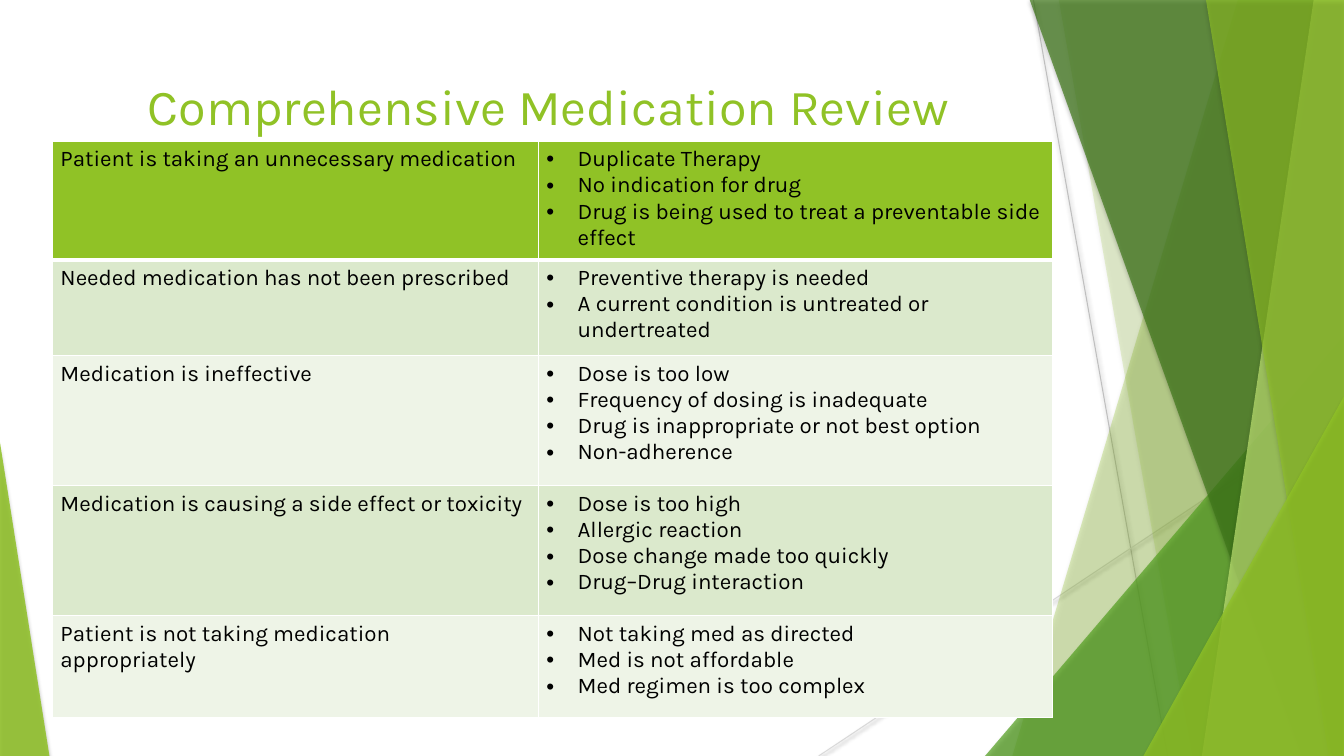
from dataclasses import dataclass

from lxml import etree
from pptx import Presentation
from pptx.dml.color import RGBColor
from pptx.enum.shapes import MSO_CONNECTOR, MSO_SHAPE
from pptx.enum.text import MSO_ANCHOR, MSO_AUTO_SIZE, PP_ALIGN
from pptx.oxml.ns import qn
from pptx.util import Pt

PX = 9144  # EMU; 100 px to the inch
WIDTH, HEIGHT = 1333, 750
FONT = "Karla"
GREEN, LEAF, FOREST, LIME = "90C226", "54A021", "3F7819", "C0E474"
BLACK, WHITE = "000000", "FFFFFF"
BANDS = ("DBE9CC", "EEF4E7")
INDENT = 31
THIN, THICK = 0.96, 3
STRAIGHT = MSO_CONNECTOR.STRAIGHT
TRIANGLE = MSO_SHAPE.ISOSCELES_TRIANGLE
CENTER, MIDDLE = PP_ALIGN.CENTER, MSO_ANCHOR.MIDDLE
NO_AUTOFIT = MSO_AUTO_SIZE.NONE


@dataclass
class Ray:
    start: tuple[int, int]
    end: tuple[int, int]
    color: str


@dataclass
class Facet:
    """A pane from a slanted left edge to the right side of the slide."""
    top_x: int
    bottom_x: int
    color: str
    opacity: int


@dataclass
class Corner:
    """A triangle standing on the bottom edge, its apex at 0 (left) or 1 (right)."""
    left: int
    top: int
    width: int
    apex: int
    color: str
    opacity: int


@dataclass
class Problem:
    name: str
    causes: list[str]
    height: int


RAYS = [
    Ray((1025, 0), (1158, 750), "BFBFBF"),
    Ray((1333, 403), (812, 750), "D9D9D9"),
]
PANES = [
    Facet(1228, 1004, GREEN, 30),
    Facet(1050, 1182, GREEN, 20),
    Corner(977, 333, 356, 1, LEAF, 72),
    Facet(1021, 1291, FOREST, 70),
    Facet(1303, 1192, LIME, 70),
    Facet(1196, 1318, GREEN, 65),
    Corner(1134, 393, 199, 1, GREEN, 80),
    Corner(0, 439, 49, 0, GREEN, 85),
]
COLUMNS = (482, 510)
PROBLEMS = [
    Problem("Patient is taking an unnecessary medication",
            ["Duplicate Therapy", "No indication for drug",
             "Drug is being used to treat a preventable side effect"], 118),
    Problem("Needed medication has not been prescribed",
            ["Preventive therapy is needed",
             "A current condition is untreated or undertreated"], 95),
    Problem("Medication is ineffective",
            ["Dose is too low", "Frequency of dosing is inadequate",
             "Drug is inappropriate or not best option", "Non-adherence"], 129),
    Problem("Medication is causing a side effect or toxicity",
            ["Dose is too high", "Allergic reaction",
             "Dose change made too quickly", "Drug–Drug interaction"], 129),
    Problem("Patient is not taking medication appropriately",
            ["Not taking med as directed", "Med is not affordable",
             "Med regimen is too complex"], 101),
]


def rgb(color: str) -> RGBColor:
    return RGBColor.from_string(color)


def px(*lengths: int) -> list[int]:
    return [length * PX for length in lengths]


def add_node(parent, tag: str, **attributes):
    return etree.SubElement(parent, qn(tag), {key: str(value) for key, value in attributes.items()})


def add_shadow(shape, opacity: int, blur: float, distance: float) -> None:
    effects = add_node(shape.element.spPr, "a:effectLst")
    shadow = add_node(effects, "a:outerShdw", blurRad=Pt(blur), dist=Pt(distance),
                      dir=90 * 60000, rotWithShape=0)
    color = add_node(shadow, "a:srgbClr", val=BLACK)
    add_node(color, "a:alpha", val=opacity * 1000)


def draw_ray(shapes, ray: Ray) -> None:
    line = shapes.add_connector(STRAIGHT, *px(*ray.start, *ray.end))
    line.line.color.rgb = rgb(ray.color)
    line.line.width = Pt(0.75)
    add_shadow(line, 38, 3.1, 1.6)


def draw_pane(shapes, pane: Facet | Corner) -> None:
    if isinstance(pane, Facet):
        builder = shapes.build_freeform(pane.top_x, -1, scale=PX)
        builder.add_line_segments([(WIDTH, -1), (WIDTH, HEIGHT), (pane.bottom_x, HEIGHT)])
        shape = builder.convert_to_shape()
    else:
        shape = shapes.add_shape(
            TRIANGLE, *px(pane.left, pane.top, pane.width, HEIGHT - pane.top))
        shape.adjustments[0] = pane.apex
    shape.fill.solid()
    shape.fill.fore_color.rgb = rgb(pane.color)
    color = shape.element.spPr.find(qn("a:solidFill")).find(qn("a:srgbClr"))
    add_node(color, "a:alpha", val=pane.opacity * 1000)
    shape.line.fill.background()
    add_shadow(shape, 35, 3, 2)


def format_title(title) -> None:
    title.left, title.top, title.width, title.height = px(74, 67, 940, 74)
    frame = title.text_frame
    frame.text = "Comprehensive Medication Review"
    frame.auto_size = NO_AUTOFIT
    frame.vertical_anchor = MIDDLE
    para = frame.paragraphs[0]
    para.alignment = CENTER
    para.font.name, para.font.size = FONT, Pt(36)
    para.font.color.rgb = rgb(GREEN)


def add_bullet(para) -> None:
    properties = para._p.get_or_add_pPr()
    properties.set("marL", str(INDENT * PX))
    properties.set("indent", str(-INDENT * PX))
    # Bullet nodes come before the default run properties
    for position, (tag, key, value) in enumerate(
            [("a:buFont", "typeface", "Arial"), ("a:buChar", "char", "•")]):
        properties.insert(position, add_node(properties, tag, **{key: value}))


def fill_cell(cell, lines: list[str], bulleted: bool, row: int) -> None:
    cell.margin_left, cell.margin_right, cell.margin_top, cell.margin_bottom = px(8, 8, 5, 5)
    cell.text_frame.text = "\n".join(lines)
    for para in cell.text_frame.paragraphs:
        para.font.name, para.font.size = FONT, Pt(16)
        para.font.color.rgb = rgb(BLACK)
        if bulleted:
            add_bullet(para)
    top = THICK if row == 1 else THIN
    bottom = THICK if row == 0 else THIN
    for side, width in zip("LRTB", (THIN, THIN, top, bottom)):
        border = add_node(cell._tc.get_or_add_tcPr(), f"a:ln{side}", w=Pt(width))
        add_node(add_node(border, "a:solidFill"), "a:srgbClr", val=WHITE)
    cell.fill.solid()
    cell.fill.fore_color.rgb = rgb(BANDS[(row - 1) % 2] if row else GREEN)


def draw_table(shapes) -> None:
    heights = [problem.height for problem in PROBLEMS]
    table = shapes.add_table(len(PROBLEMS), len(COLUMNS),
                             *px(52, 140, sum(COLUMNS), sum(heights))).table
    table.first_row = table.horz_banding = False
    for column, width in zip(table.columns, COLUMNS):
        column.width = width * PX
    for row, problem in enumerate(PROBLEMS):
        table.rows[row].height = problem.height * PX
        fill_cell(table.cell(row, 0), [problem.name], False, row)
        fill_cell(table.cell(row, 1), problem.causes, True, row)


def main() -> None:
    deck = Presentation()
    deck.slide_width, deck.slide_height = px(WIDTH, HEIGHT)
    page = deck.slides.add_slide(deck.slide_layouts[5])
    shapes = page.shapes
    for ray in RAYS:
        draw_ray(shapes, ray)
    for pane in PANES:
        draw_pane(shapes, pane)
    format_title(shapes.title)
    draw_table(shapes)
    deck.save("out.pptx")


if __name__ == "__main__":
    main()
